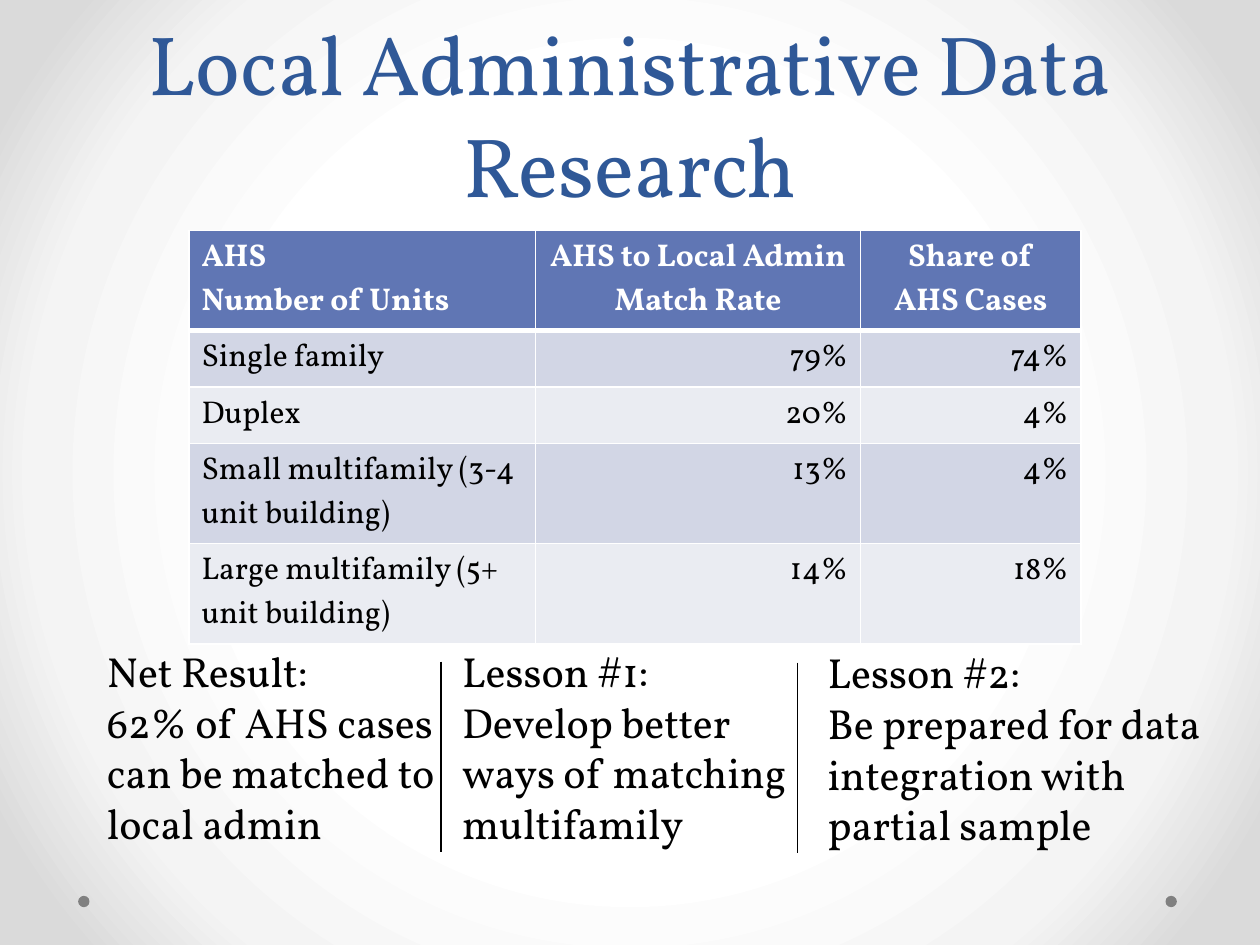
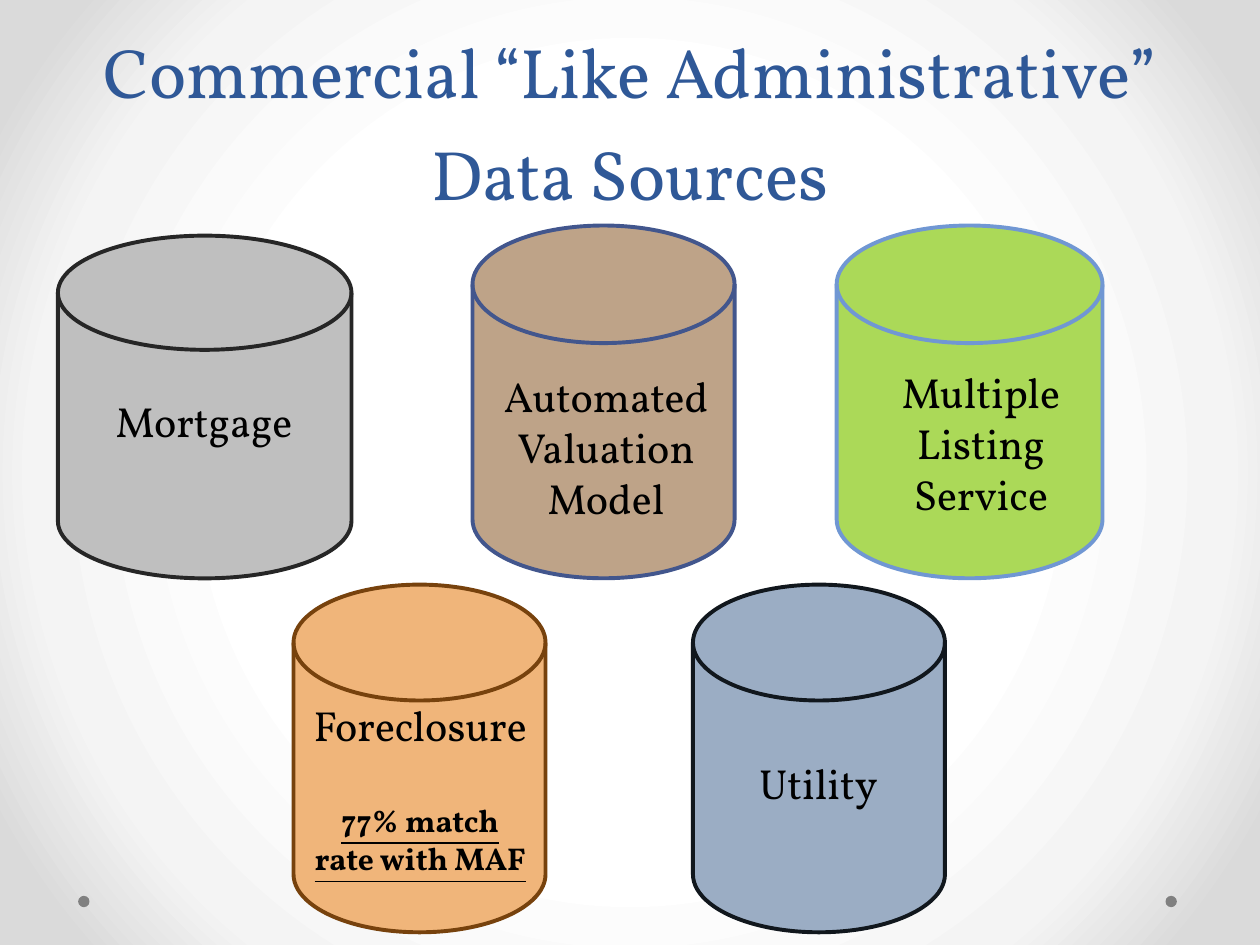
import pptx
import pptx.dml.color
import pptx.enum.shapes
import pptx.enum.text
import pptx.oxml.ns
import pptx.util
from lxml import etree

Inches = pptx.util.Inches
Pt = pptx.util.Pt
qn = pptx.oxml.ns.qn
Shape = pptx.enum.shapes.MSO_SHAPE
Align = pptx.enum.text.PP_ALIGN
Anchor = pptx.enum.text.MSO_ANCHOR

FONT = "Vollkorn"
BLUE, BLACK, WHITE, GRAY = "2F5897", "000000", "FFFFFF", "808080"
HEAD, BANDS = "6076B4", ("D2D6E5", "EAECF2")
GLOW = ((0, WHITE), (50, WHITE), (76, "F4F4F4"), (92, "DADADA"), (100, "DADADA"))


def color(code):
    return pptx.dml.color.RGBColor.from_string(code)


def box(left, top, width, height):
    return [Inches(n) for n in (left, top, width, height)]


class Deck:
    """Holds the shared style and the current slide."""

    def __init__(self):
        self.prs = pptx.Presentation()
        self.prs.slide_width, self.prs.slide_height = Inches(10), Inches(7.5)
        self.slide = None
        self.glow()

    def glow(self):
        """Give the master a round gradient that darkens outward."""
        master = self.prs.slide_master
        master.background.fill.gradient()
        grad = master.element.find(".//" + qn("a:gradFill"))
        for child in list(grad):
            grad.remove(child)
        stops = etree.SubElement(grad, qn("a:gsLst"))
        for place, code in GLOW:
            stop = etree.SubElement(stops, qn("a:gs"), pos=str(place * 1000))
            etree.SubElement(stop, qn("a:srgbClr"), val=code)
        ring = etree.SubElement(grad, qn("a:path"), {"path": "circle"})
        etree.SubElement(ring, qn("a:fillToRect"), {side: "50000" for side in "ltrb"})

    def start(self, title, size):
        """Add a slide with its title and the two corner dots."""
        self.slide = self.prs.slides.add_slide(self.prs.slide_layouts[5])
        for left in (9.25, 0.62):
            self.shape(Shape.OVAL, (left, 7.11, 0.09, 0.09), GRAY)
        head = self.slide.shapes.title
        head.left, head.top, head.width, head.height = box(0.5, 0, 9, 1.75)
        frame = head.text_frame
        frame.word_wrap = True
        frame.auto_size = pptx.enum.text.MSO_AUTO_SIZE.NONE
        frame.vertical_anchor = Anchor.BOTTOM
        self.put(frame.paragraphs[0], title, size, BLUE, Align.CENTER, lead=58)

    def put(self, para, text, size, code=BLACK, align=Align.LEFT,
            lead=29, bold=False, line=False):
        """Add one styled run to a paragraph."""
        para.alignment, para.line_spacing = align, Pt(lead)
        run = para.add_run()
        run.text = text
        font = run.font
        font.name, font.size, font.bold, font.underline = FONT, Pt(size), bold, line
        font.color.rgb = color(code)

    def shape(self, kind, spot, fill, edge=None):
        item = self.slide.shapes.add_shape(kind, *box(*spot))
        item.shadow.inherit = False
        item.fill.solid()
        item.fill.fore_color.rgb = color(fill)
        if edge:
            item.line.color.rgb = color(edge)
            item.line.width = Pt(2.25)
        else:
            item.line.fill.background()

    def text(self, spot, lines, align=Align.LEFT, anchor=Anchor.TOP):
        frame = self.slide.shapes.add_textbox(*box(*spot)).text_frame
        frame.word_wrap = True
        frame.vertical_anchor = anchor
        for index, line in enumerate(lines):
            para = frame.add_paragraph() if index else frame.paragraphs[0]
            self.put(para, line, 24, align=align)
        return frame

    def rule(self, left, top, height):
        line = self.slide.shapes.add_connector(
            pptx.enum.shapes.MSO_CONNECTOR.STRAIGHT,
            Inches(left), Inches(top), Inches(left), Inches(top + height))
        line.line.color.rgb = color(BLACK)
        line.line.width = Pt(0.75)
        etree.SubElement(line.element.spPr, qn("a:effectLst"))

    def table(self, left, top, widths, height, rows):
        grid = self.slide.shapes.add_table(
            len(rows), len(widths),
            *box(left, top, sum(widths), height * len(rows))).table
        for col, width in zip(grid.columns, widths):
            col.width = Inches(width)
        for r, row in enumerate(rows):
            grid.rows[r].height = Inches(height)
            for c, text in enumerate(row):
                self.cell(grid.cell(r, c), text, r, c)

    def cell(self, cell, text, r, c):
        edges = {"L": 1, "R": 1, "T": 3 if r == 1 else 1, "B": 1 if r else 3}
        props = cell._tc.get_or_add_tcPr()
        for side, width in edges.items():
            edge = etree.SubElement(props, qn("a:ln" + side), w=str(int(Pt(width))))
            fill = etree.SubElement(edge, qn("a:solidFill"))
            etree.SubElement(fill, qn("a:srgbClr"), val=WHITE)
        cell.fill.solid()
        cell.fill.fore_color.rgb = color(BANDS[(r - 1) % 2] if r else HEAD)
        align = Align.LEFT if c == 0 else Align.RIGHT if r else Align.CENTER
        frame = cell.text_frame
        for index, line in enumerate(text.split("\n")):
            para = frame.add_paragraph() if index else frame.paragraphs[0]
            self.put(para, line, 18, BLACK if r else WHITE, align,
                     lead=25, bold=r == 0)


def local(deck):
    deck.start("Local Administrative Data Research", 48)
    deck.table(1.5, 1.83, (2.75, 2.58, 1.75), 0.41, (
        ("AHS\nNumber of Units", "AHS to Local Admin Match Rate", "Share of AHS Cases"),
        ("Single family", "79%", "74%"),
        ("Duplex", "20%", "4%"),
        ("Small multifamily (3-4 unit building)", "13%", "4%"),
        ("Large multifamily (5+ unit building)", "14%", "18%"),
    ))
    notes = (
        (0.75, 6.11, 2.83, "Net Result:",
         "62% of AHS cases can be matched to local admin"),
        (3.57, 6.11, 2.93, "Lesson #1:",
         "Develop better ways of matching multifamily"),
        (6.47, 6.12, 3.25, "Lesson #2:",
         "Be prepared for data integration with partial sample"),
    )
    for left, top, width, *lines in notes:
        deck.text((left, top, width, 0.67), lines, anchor=Anchor.BOTTOM)
    for left, top in ((3.5, 5.25), (6.33, 5.26)):
        deck.rule(left, top, 1.51)


def trade(deck):
    deck.start("Commercial “Like Administrative” Data Sources", 40)
    disks = (
        ((3.75, 1.79, 2.08, 2.8), "BEA388", "42568D",
         (3.79, 2.89, 2.04, 1.31), ("Automated Valuation", "Model")),
        ((0.46, 1.87, 2.33, 2.72), "BFBFBF", "262626",
         (0.45, 3.09, 2.34, 0.5), ("Mortgage",)),
        ((6.64, 1.79, 2.11, 2.8), "ABD958", "7097D3",
         (6.64, 2.86, 2.29, 1.31), ("Multiple Listing Service",)),
        ((5.5, 4.64, 2, 2.76), "9BADC4", "11171D",
         (5.52, 5.96, 1.95, 0.5), ("Utility",)),
        ((2.33, 4.64, 2, 2.76), "F0B57A", "77420D",
         (2.36, 5.5, 1.95, 1.51), ("Foreclosure",)),
    )
    for spot, fill, edge, label, lines in disks:
        deck.shape(Shape.FLOWCHART_MAGNETIC_DISK, spot, fill, edge)
        frame = deck.text(label, lines, Align.CENTER)
    rate = frame.add_paragraph()
    rate.space_before = Pt(29)
    deck.put(rate, "77% match rate with MAF", 18, align=Align.CENTER,
             lead=21.75, bold=True, line=True)


def main():
    deck = Deck()
    local(deck)
    trade(deck)
    deck.prs.save("out.pptx")


if __name__ == "__main__":
    main()
